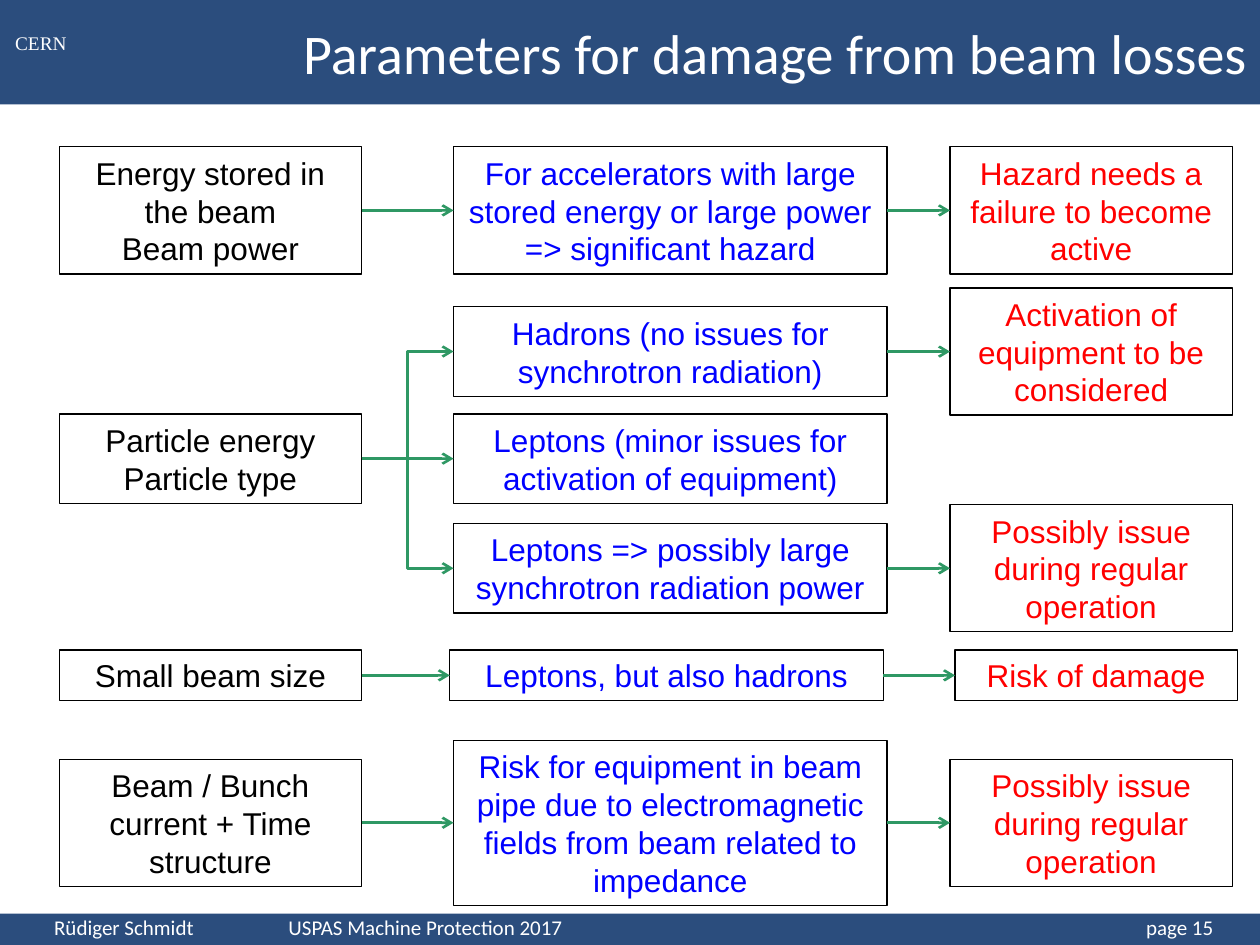
"""Build the slide on beam parameters, their hazards and their consequences."""
from lxml import etree
from pptx import Presentation
from pptx.dml.color import RGBColor
from pptx.enum.shapes import MSO_CONNECTOR, MSO_SHAPE
from pptx.enum.text import MSO_ANCHOR, MSO_AUTO_SIZE, PP_ALIGN
from pptx.oxml.ns import qn
from pptx.util import Inches, Pt

RECTANGLE = MSO_SHAPE.RECTANGLE
ELBOW = MSO_CONNECTOR.ELBOW
LEFT, CENTER, RIGHT = PP_ALIGN.LEFT, PP_ALIGN.CENTER, PP_ALIGN.RIGHT
MIDDLE, BOTTOM = MSO_ANCHOR.MIDDLE, MSO_ANCHOR.BOTTOM
FIT_SHAPE, FIT_NONE = MSO_AUTO_SIZE.SHAPE_TO_FIT_TEXT, MSO_AUTO_SIZE.NONE
LEFT_SITE, RIGHT_SITE = 1, 3

COLORS = {
    "band": "062F67",
    "white": "FFFFFF",
    "parameter": "000000",
    "hazard": "0000FF",
    "consequence": "FF0000",
    "outline": "000000",
    "arrow": "2F9864",
}
COLUMNS = {"parameter": (0.47, 2.4), "hazard": (3.6, 3.44), "consequence": (7.54, 2.24)}
HEIGHTS = {1: 0.4, 2: 0.71, 3: 1.01, 4: 1.31}

BOXES = {
    "stored energy": ("parameter", 1.67, 3, "Energy stored in the beam\nBeam power"),
    "large machines": ("hazard", 1.67, 3, "For accelerators with large stored energy "
                       "or large power => significant hazard"),
    "failure": ("consequence", 1.67, 3, "Hazard needs a failure to become active"),
    "particles": ("parameter", 3.64, 2, "Particle energy\nParticle type"),
    "hadrons": ("hazard", 2.79, 2, "Hadrons (no issues for synchrotron radiation)"),
    "leptons": ("hazard", 3.64, 2, "Leptons (minor issues for activation of equipment)"),
    "synchrotron": ("hazard", 4.51, 2, "Leptons => possibly large synchrotron radiation power"),
    "activation": ("consequence", 2.79, 3, "Activation of equipment to be considered"),
    "radiation issue": ("consequence", 4.51, 3, "Possibly issue during regular operation"),
    "beam size": ("parameter", 5.36, 1, "Small beam size"),
    "both kinds": ("hazard", 5.36, 1, "Leptons, but also hadrons"),
    "damage": ("consequence", 5.36, 1, "Risk of damage"),
    "current": ("parameter", 6.53, 3, "Beam / Bunch current + Time structure"),
    "impedance": ("hazard", 6.53, 4, "Risk for equipment in beam pipe due to electromagnetic "
                  "fields from beam related to impedance"),
    "impedance issue": ("consequence", 6.53, 3, "Possibly issue during regular operation"),
}
SHIFTS = {"both kinds": -0.03, "damage": 0.04}
ARROWS = [
    ("stored energy", "large machines"), ("large machines", "failure"),
    ("particles", "hadrons"), ("particles", "leptons"), ("particles", "synchrotron"),
    ("hadrons", "activation"), ("synchrotron", "radiation issue"),
    ("beam size", "both kinds"), ("both kinds", "damage"),
    ("current", "impedance"), ("impedance", "impedance issue"),
]


def rgb(name):
    """Return the named colour."""
    return RGBColor.from_string(COLORS[name])


def format_text(frame, color, font, size, align):
    """Give all paragraphs of a frame one font, colour and alignment."""
    for paragraph in frame.paragraphs:
        paragraph.alignment = align
        paragraph.font.name = font
        paragraph.font.size = Pt(size)
        paragraph.font.color.rgb = rgb(color)


def add_band(slide, top, height):
    """Add a translucent band behind the title and return it."""
    band = slide.shapes.add_shape(RECTANGLE, 0, Inches(top), Inches(10), Inches(height))
    band.shadow.inherit = False
    band.line.fill.background()
    band.fill.solid()
    band.fill.fore_color.rgb = rgb("band")
    tint = band.fill._xPr.find(".//" + qn("a:srgbClr"))
    etree.SubElement(tint, qn("a:alpha"), val="85000")
    slide.shapes.title.element.addprevious(band.element)


def set_title(slide, text):
    """Place and format the title."""
    title = slide.shapes.title
    title.left, title.top = Inches(0.83), Inches(0)
    title.width, title.height = Inches(9.17), Inches(0.83)
    frame = title.text_frame
    frame.text = text
    frame.vertical_anchor = MIDDLE
    frame.auto_size = FIT_NONE
    format_text(frame, "white", "Calibri", 32, RIGHT)


def add_institute(slide, text):
    """Add the institute name in the header."""
    label = slide.shapes.add_textbox(Inches(-0.01), Inches(0.2), Inches(0.67), Inches(0.29))
    frame = label.text_frame
    frame.word_wrap = True
    frame.text = text
    format_text(frame, "white", "Times New Roman", 11, CENTER)


def add_footer(slide, author, event, page):
    """Add the footer line with its parts set on tab stops."""
    footer = slide.shapes.add_textbox(0, Inches(7.25), Inches(9.83), Inches(0.26))
    frame = footer.text_frame
    frame.word_wrap = True
    frame.vertical_anchor = BOTTOM
    frame.margin_left = Inches(0.43)
    frame.text = "\t".join((author, event, page))
    stops = etree.SubElement(frame.paragraphs[0]._p.get_or_add_pPr(), qn("a:tabLst"))
    for position, align in ((1.86, "l"), (9.2, "r")):
        etree.SubElement(stops, qn("a:tab"), pos=str(Inches(position)), algn=align)
    format_text(frame, "white", "Calibri", 12, LEFT)


def add_box(slide, name):
    """Add an outlined box centred on its row and return it."""
    column, middle, lines, text = BOXES[name]
    left, width = COLUMNS[column]
    height = HEIGHTS[lines]
    box = slide.shapes.add_shape(RECTANGLE, Inches(left + SHIFTS.get(name, 0)),
                                 Inches(middle - height / 2), Inches(width), Inches(height))
    box.shadow.inherit = False
    box.fill.background()
    box.line.color.rgb = rgb("outline")
    box.line.width = Pt(0.75)
    frame = box.text_frame
    frame.word_wrap = True
    frame.auto_size = FIT_SHAPE
    frame.text = text
    format_text(frame, column, "Arial", 18, CENTER)
    return box


def add_arrow(slide, source, target):
    """Connect the right side of one box to the left side of another."""
    arrow = slide.shapes.add_connector(ELBOW, 0, 0, 0, 0)
    arrow.begin_connect(source, RIGHT_SITE)
    arrow.end_connect(target, LEFT_SITE)
    arrow.line.color.rgb = rgb("arrow")
    arrow.line.width = Pt(1.5)
    etree.SubElement(arrow.line._get_or_add_ln(), qn("a:tailEnd"), type="arrow")
    etree.SubElement(arrow.element.spPr, qn("a:effectLst"))


def main():
    """Build and save the slide."""
    deck = Presentation()
    deck.slide_width, deck.slide_height = Inches(10), Inches(7.5)
    slide = deck.slides.add_slide(deck.slide_layouts[5])
    add_band(slide, 0, 0.83)
    add_band(slide, 7.25, 0.25)
    set_title(slide, "Parameters for damage from beam losses")
    add_institute(slide, "CERN")
    add_footer(slide, "Rüdiger Schmidt", "USPAS Machine Protection 2017", "page 15")
    boxes = {name: add_box(slide, name) for name in BOXES}
    for source, target in ARROWS:
        add_arrow(slide, boxes[source], boxes[target])
    deck.save("out.pptx")


if __name__ == "__main__":
    main()
